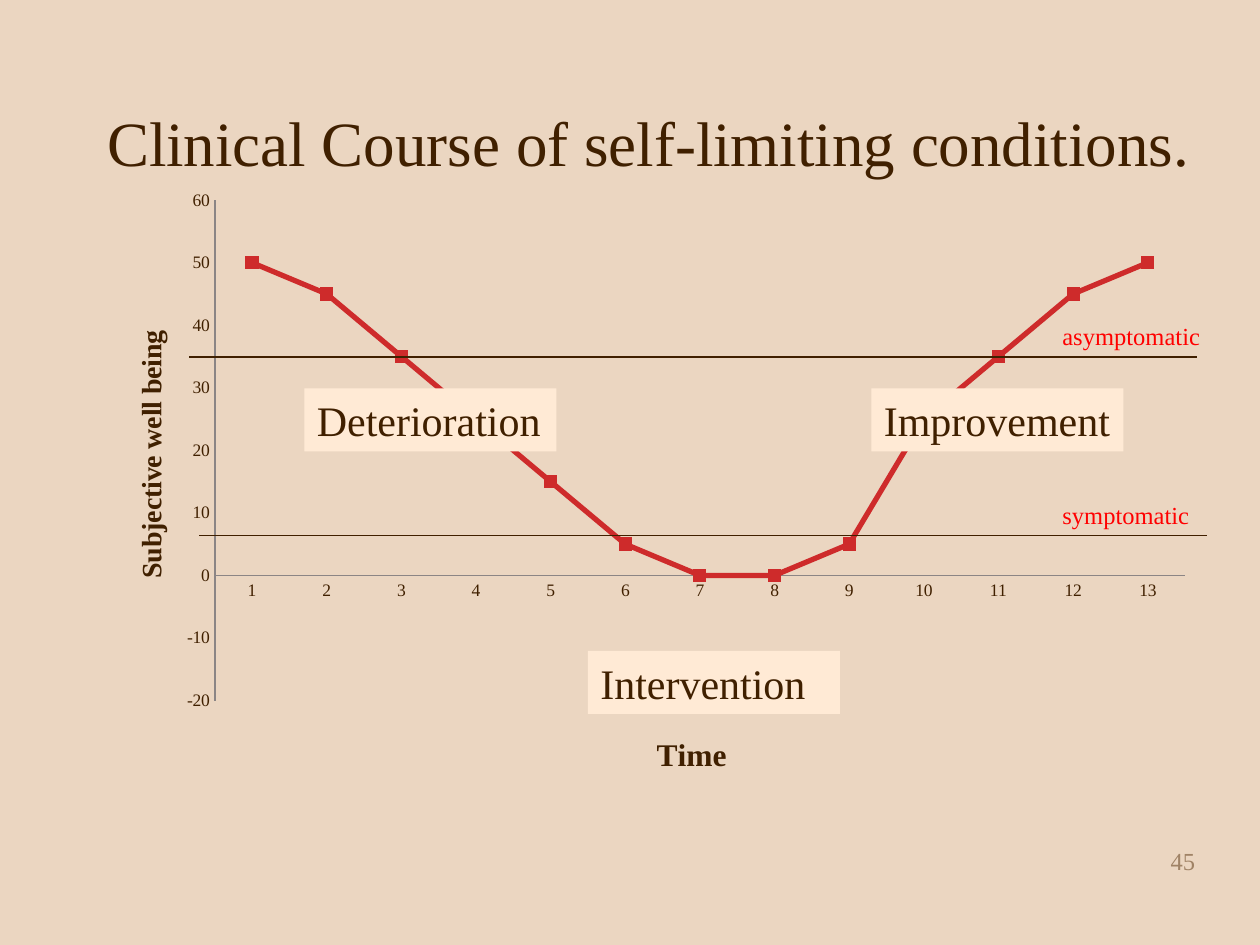
from lxml import etree
from pptx import Presentation
from pptx.chart.data import CategoryChartData
from pptx.dml.color import RGBColor
from pptx.enum.chart import XL_CHART_TYPE, XL_MARKER_STYLE, XL_TICK_MARK
from pptx.enum.shapes import MSO_CONNECTOR, MSO_SHAPE
from pptx.enum.text import MSO_ANCHOR, PP_ALIGN
from pptx.oxml.ns import qn
from pptx.util import Pt

LINE_MARKERS = XL_CHART_TYPE.LINE_MARKERS
SQUARE = XL_MARKER_STYLE.SQUARE
NO_TICK = XL_TICK_MARK.NONE
STRAIGHT = MSO_CONNECTOR.STRAIGHT
RECTANGLE = MSO_SHAPE.RECTANGLE
TOP, MIDDLE = MSO_ANCHOR.TOP, MSO_ANCHOR.MIDDLE
LEFT, RIGHT = PP_ALIGN.LEFT, PP_ALIGN.RIGHT

FONT = "Times New Roman"
COLORS = {
    "background": "EBD6C1",
    "text": "402000",
    "box": "FFEAD5",
    "curve": "CE2B2B",
    "axis": "8B8585",
    "threshold": "FF0000",
    "number": "A08366",
}

TITLE = "Clinical Course of self-limiting conditions."
TITLE_BOX = (54, 36, 642, 90)
WELL_BEING = [50, 45, 35, 25, 15, 5, 0, 0, 5, 25, 35, 45, 50]
CHART_BOX = (54, 102, 636, 354)
PLOT_LAYOUT = {"x": 0.108, "y": 0.035, "w": 0.872, "h": 0.808}
AXIS_TITLES = {
    "category_axis": ("Time", 18, {"x": 0.5, "y": 0.89}, 0.75),
    "value_axis": ("Subjective well being", 16, {"x": 0.03, "y": 0.237}, 1.25),
}
PHASES = [("Improvement", 498, 222), ("Intervention", 336, 372), ("Deterioration", 174, 222)]
PHASE_SIZE = (144, 36)
THRESHOLDS = [("asymptomatic", 108, 204), ("symptomatic", 114, 306)]
THRESHOLD_LENGTH = 576
LABEL_LEFT, LABEL_RISE, LABEL_SIZE = 600, 24, (102, 24.5)
NUMBER, NUMBER_BOX = "45", (540, 480, 150, 36)


def color(name):
    return RGBColor.from_string(COLORS[name])


def points(values):
    return [Pt(value) for value in values]


def format_font(font, size, color_name="text", bold=False):
    values = {"name": FONT, "size": Pt(size), "bold": bold}
    for attribute, value in values.items():
        setattr(font, attribute, value)
    font.color.rgb = color(color_name)


def format_line(line, color_name, width):
    line.color.rgb = color(color_name)
    line.width = Pt(width)


def write_text(shape, text, size, color_name="text", align=LEFT, anchor=TOP):
    frame = shape.text_frame
    frame.word_wrap = True
    frame.vertical_anchor = anchor
    paragraph = frame.paragraphs[0]
    paragraph.alignment = align
    run = paragraph.add_run()
    run.text = text
    format_font(run.font, size, color_name)


def set_layout(parent, position, index, inner=False):
    for old in parent.findall(qn("c:layout")):
        parent.remove(old)
    layout = etree.Element(qn("c:layout"))
    manual = etree.SubElement(layout, qn("c:manualLayout"))
    settings = {"layoutTarget": "inner"} if inner else {}
    settings.update(xMode="edge", yMode="edge", **position)
    for tag, value in settings.items():
        etree.SubElement(manual, qn(f"c:{tag}")).set("val", str(value))
    parent.insert(index, layout)


def add_curve(slide):
    data = CategoryChartData()
    data.categories = [str(number) for number in range(1, len(WELL_BEING) + 1)]
    data.add_series("Series 1", WELL_BEING)
    chart = slide.shapes.add_chart(LINE_MARKERS, *points(CHART_BOX), data).chart
    chart.has_legend = chart.has_title = False
    format_font(chart.font, 10)
    plot = chart.plots[0]
    plot.vary_by_categories = False
    series = plot.series[0]
    series.smooth = False
    format_line(series.format.line, "curve", 3)
    series.marker.style = SQUARE
    series.marker.size = 7
    series.marker.format.fill.solid()
    series.marker.format.fill.fore_color.rgb = color("curve")
    format_line(series.marker.format.line, "curve", 0.75)

    for name, (text, size, position, width) in AXIS_TITLES.items():
        axis = getattr(chart, name)
        axis.has_major_gridlines = False
        axis.major_tick_mark = axis.minor_tick_mark = NO_TICK
        format_line(axis.format.line, "axis", width)
        paragraph = axis.axis_title.text_frame.paragraphs[0]
        run = paragraph.add_run()
        run.text = text
        format_font(run.font, size, bold=True)
        title = run.font._element.getparent()
        while title.tag != qn("c:title"):
            title = title.getparent()
        set_layout(title, position, 1)
    scale = {"minimum_scale": -20, "maximum_scale": 60, "major_unit": 10}
    for attribute, value in scale.items():
        setattr(chart.value_axis, attribute, value)
    plot_area = chart._chartSpace.find(f".//{qn('c:plotArea')}")
    set_layout(plot_area, PLOT_LAYOUT, 0, inner=True)


def add_phase(slide, text, left, top):
    shape = slide.shapes.add_shape(RECTANGLE, *points((left, top, *PHASE_SIZE)))
    shape.shadow.inherit = False
    shape.fill.solid()
    shape.fill.fore_color.rgb = color("box")
    shape.line.fill.background()
    write_text(shape, text, 24)


def add_threshold(slide, left, top):
    ends = points((left, top, left + THRESHOLD_LENGTH, top))
    connector = slide.shapes.add_connector(STRAIGHT, *ends)
    format_line(connector.line, "text", 0.75)
    etree.SubElement(connector._element.spPr, qn("a:effectLst"))


def add_label(slide, text, box, size, color_name, align=LEFT):
    label = slide.shapes.add_textbox(*points(box))
    write_text(label, text, size, color_name, align)


def main():
    presentation = Presentation()
    presentation.slide_width, presentation.slide_height = Pt(720), Pt(540)
    slide = presentation.slides.add_slide(presentation.slide_layouts[5])
    slide.background.fill.solid()
    slide.background.fill.fore_color.rgb = color("background")

    title = slide.shapes.title
    title.left, title.top, title.width, title.height = points(TITLE_BOX)
    write_text(title, TITLE, 36, anchor=MIDDLE)
    add_label(slide, NUMBER, NUMBER_BOX, 14, "number", RIGHT)
    add_curve(slide)
    for phase in PHASES:
        add_phase(slide, *phase)
    for _, left, top in THRESHOLDS:
        add_threshold(slide, left, top)
    for text, _, top in THRESHOLDS:
        box = (LABEL_LEFT, top - LABEL_RISE, *LABEL_SIZE)
        add_label(slide, text, box, 14, "threshold")
    presentation.save("out.pptx")


if __name__ == "__main__":
    main()
